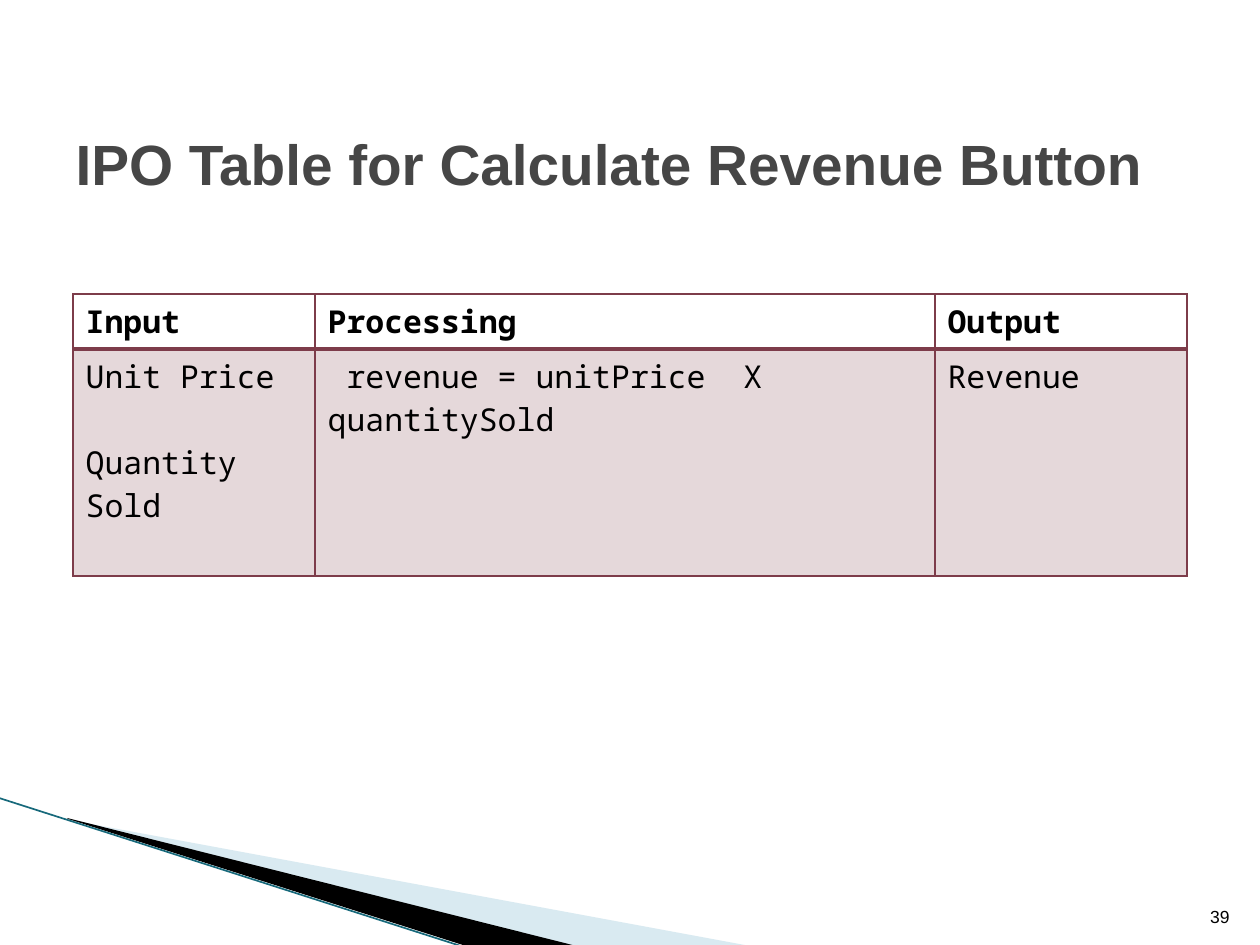
from lxml.etree import SubElement
from pptx import Presentation
from pptx.dml.color import RGBColor
from pptx.enum.shapes import MSO_CONNECTOR
from pptx.enum.text import MSO_ANCHOR, MSO_AUTO_SIZE, PP_ALIGN
from pptx.oxml.ns import qn
from pptx.util import Pt

PX = 7257.14  # EMU per px, at 126 px to the inch
COLORS = {
    "title": "464646",
    "text": "000000",
    "table": "7D3C4A",
    "wedge_light": "A0CBDC",
    "wedge_dark": "000000",
    "wedge_edge": "17697B",
}
HEADINGS = ["Input", "Processing", "Output"]
ENTRIES = [
    ["Unit Price", "Quantity Sold"],
    [" revenue = unitPrice  X quantitySold"],
    ["Revenue"],
]


def px(value):
    return round(value * PX)


def rgb(name):
    return RGBColor.from_string(COLORS[name])


def add_run(paragraph, text, font_name, size, color, bold=False):
    run = paragraph.add_run()
    run.text = text
    run.font.name = font_name
    run.font.size = Pt(size)
    run.font.bold = bold
    run.font.color.rgb = rgb(color)


def set_alpha(fill_parent, percent):
    color = fill_parent.find(qn("a:solidFill"))[0]
    SubElement(color, qn("a:alpha"), val=str(percent * 1000))


def add_wedge(slide, left, top, points, color, alpha=100):
    corners = [(px(left + x), px(top + y)) for x, y in points]
    builder = slide.shapes.build_freeform(*corners[0], scale=1.0)
    builder.add_line_segments(corners[1:], close=True)
    shape = builder.convert_to_shape()
    shape.shadow.inherit = False
    shape.fill.solid()
    shape.fill.fore_color.rgb = rgb(color)
    set_alpha(shape.fill._xPr, alpha)
    shape.line.fill.background()


def add_corner_decoration(slide, left, top):
    add_wedge(slide, left, top, [(70, 22), (751, 148), (576, 148), (70, 21)],
              "wedge_light", 40)
    add_wedge(slide, left, top, [(68, 20), (577, 148), (470, 149), (69, 21)],
              "wedge_dark")
    edge = slide.shapes.add_connector(
        MSO_CONNECTOR.STRAIGHT, px(left), px(top), px(left + 468), px(top + 150))
    edge.line.color.rgb = rgb("wedge_edge")
    edge.line.width = Pt(0.95)
    SubElement(edge._element.spPr, qn("a:effectLst"))


def fill_title(slide, left, top, width, height):
    title = slide.shapes.title
    title.left, title.top = px(left), px(top)
    title.width, title.height = px(width), px(height)
    frame = title.text_frame
    frame.auto_size = MSO_AUTO_SIZE.NONE
    frame.vertical_anchor = MSO_ANCHOR.MIDDLE
    paragraph = frame.paragraphs[0]
    paragraph.alignment = PP_ALIGN.LEFT
    add_run(paragraph, "IPO Table for Calculate Revenue Button",
            "Arial", 32.4, "title", bold=True)


def set_borders(cell, **widths):
    properties = cell._tc.get_or_add_tcPr()
    for side in ("L", "R", "T", "B"):
        line = SubElement(properties, qn(f"a:ln{side}"),
                          w=str(Pt(widths.get(side, 1))))
        fill = SubElement(line, qn("a:solidFill"))
        SubElement(fill, qn("a:srgbClr"), val=COLORS["table"])


def fill_cell(cell, texts, bold):
    frame = cell.text_frame
    for index, text in enumerate(texts):
        paragraph = frame.add_paragraph() if index else frame.paragraphs[0]
        if index:
            paragraph.space_before = Pt(24.4)
        add_run(paragraph, text, "Noto Sans Mono", 18, "text", bold)


def add_ipo_table(slide, left, top, widths, heights):
    table = slide.shapes.add_table(
        len(heights), len(widths), px(left), px(top),
        px(sum(widths)), px(sum(heights))).table
    table.horz_banding = False
    for row, height in zip(table.rows, heights):
        row.height = px(height)
    for index, width in enumerate(widths):
        table.columns[index].width = px(width)
        # Heading cell, with the heavier rule below it
        heading = table.cell(0, index)
        set_borders(heading, B=2)
        heading.fill.background()
        fill_cell(heading, [HEADINGS[index]], bold=True)
        # Tinted entry cell
        entry = table.cell(1, index)
        set_borders(entry, T=2)
        entry.fill.solid()
        entry.fill.fore_color.rgb = rgb("table")
        set_alpha(entry._tc.tcPr, 20)
        fill_cell(entry, ENTRIES[index], bold=False)


def add_slide_number(slide, left, top, width, height):
    box = slide.shapes.add_textbox(px(left), px(top), px(width), px(height))
    frame = box.text_frame
    frame.word_wrap = True
    frame.vertical_anchor = MSO_ANCHOR.BOTTOM
    paragraph = frame.paragraphs[0]
    paragraph.alignment = PP_ALIGN.RIGHT
    add_run(paragraph, "39", "Arial", 10, "text")


def main():
    presentation = Presentation()
    presentation.slide_width, presentation.slide_height = px(1260), px(945)
    slide = presentation.slides.add_slide(presentation.slide_layouts[5])
    add_corner_decoration(slide, -1, 798)
    add_slide_number(slide, 1192, 883, 50, 50)
    fill_title(slide, 63, 84, 1197, 158)
    add_ipo_table(slide, 73, 294, widths=[242, 620, 252], heights=[55, 227])
    presentation.save("out.pptx")


if __name__ == "__main__":
    main()
